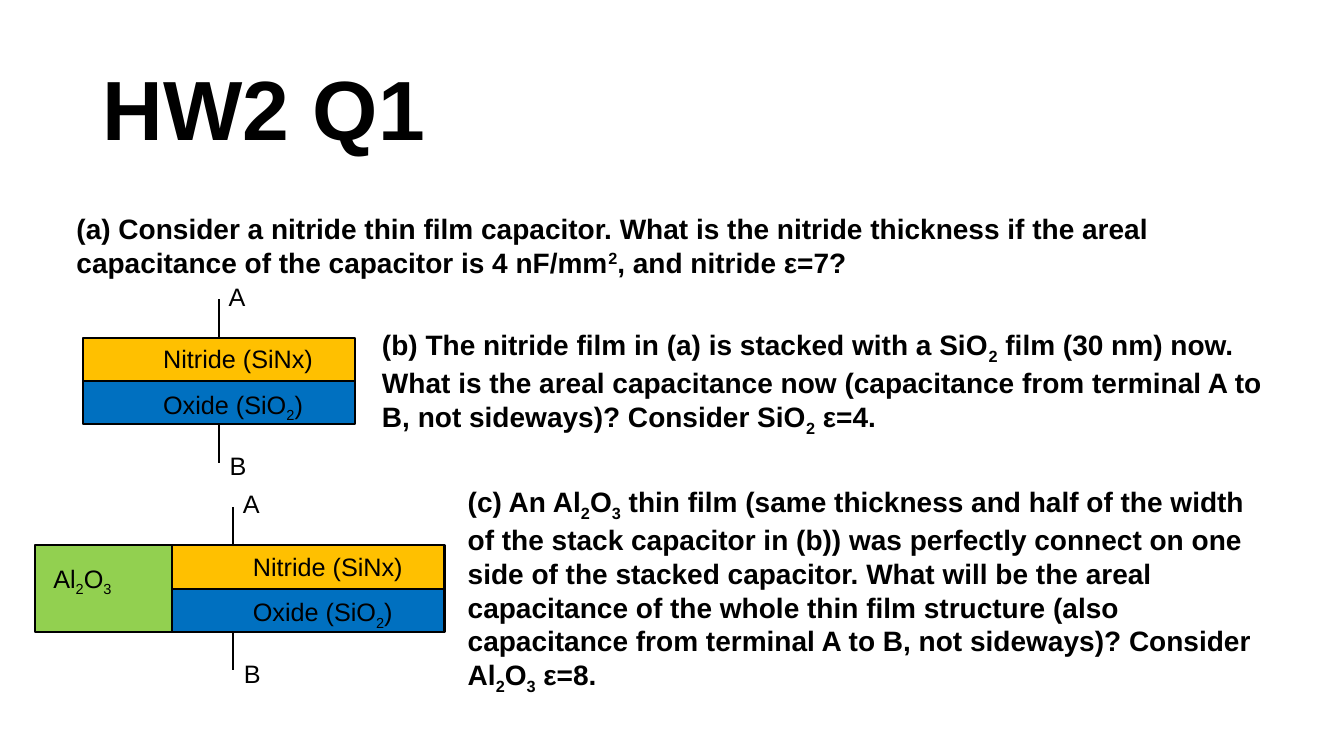
from pptx import Presentation
from pptx.dml.color import RGBColor
from pptx.enum.shapes import MSO_CONNECTOR, MSO_SHAPE
from pptx.enum.text import MSO_ANCHOR, MSO_AUTO_SIZE, PP_ALIGN
from pptx.oxml.ns import qn
from pptx.util import Pt
from lxml import etree

RECT, STRAIGHT = MSO_SHAPE.RECTANGLE, MSO_CONNECTOR.STRAIGHT
GROW, FIXED = MSO_AUTO_SIZE.SHAPE_TO_FIT_TEXT, MSO_AUTO_SIZE.NONE
MIDDLE, LEFT = MSO_ANCHOR.MIDDLE, PP_ALIGN.LEFT
BLACK = RGBColor(0x00, 0x00, 0x00)
AMBER = RGBColor(0xFF, 0xC0, 0x00)
BLUE = RGBColor(0x00, 0x70, 0xC0)
GREEN = RGBColor(0x92, 0xD0, 0x50)
FONT = "Arial"
PX = 9144  # EMU per px, 100 px to the inch

# Content: each run is (text, baseline shift in percent)
SUP, SUB = 30, -25
TITLE = "HW2 Q1"
ALUMINA = [("Al", 0), ("2", SUB), ("O", 0), ("3", SUB)]
QUESTIONS = [  # (left, top, width, height), runs
    ((66, 205, 1218, 125), [
        ("(a) Consider a nitride thin film capacitor. What is the nitride thickness "
         "if the areal capacitance of the capacitor is 4 nF/mm", 0),
        ("2", SUP), (", and nitride ε=7?", 0)]),
    ((369, 320, 905, 158), [
        ("(b) The nitride film in (a) is stacked with a SiO", 0), ("2", SUB),
        (" film (30 nm) now. What is the areal capacitance now (capacitance from "
         "terminal A to B, not sideways)? Consider SiO", 0),
        ("2", SUB), (" ε=4.", 0)]),
    ((454, 476, 818, 259), [
        ("(c) An ", 0), *ALUMINA,
        (" thin film (same thickness and half of the width of the stack capacitor "
         "in (b)) was perfectly connect on one side of the stacked capacitor. What "
         "will be the areal capacitance of the whole thin film structure (also "
         "capacitance from terminal A to B, not sideways)? Consider ", 0),
        *ALUMINA, (" ε=8.", 0)]),
]
LAYERS = [  # fill, label runs, label drop below the layer's top
    (AMBER, [("Nitride (SiNx)", 0)], 1),
    (BLUE, [("Oxide (SiO", 0), ("2", SUB), (")", 0)], 3),
]
STACKS = [(82, 335, 217), (171, 541, 231)]  # left, top, wire x
LAYER_W, LAYER_H, WIRE = 270, 43, 38
ALUMINA_W = 136


def emu(*lengths):
    return [n * PX for n in lengths]


def add_runs(p, runs, size, bold):
    for text, shift in runs:
        r = p.add_run()
        r.text = text
        r.font.name, r.font.size, r.font.bold = FONT, Pt(size), bold
        r.font.color.rgb = BLACK
        if shift:
            r._r.get_or_add_rPr().set("baseline", str(shift * 1000))


def add_text(s, box, runs, size=18, bold=False):
    tf = s.shapes.add_textbox(*emu(*box)).text_frame
    tf.word_wrap, tf.auto_size = True, GROW
    add_runs(tf.paragraphs[0], runs, size, bold)


def add_film(s, box, fill):
    sp = s.shapes.add_shape(RECT, *emu(*box))
    sp.shadow.inherit = False
    sp.fill.solid()
    sp.fill.fore_color.rgb = fill
    sp.line.color.rgb, sp.line.width = BLACK, Pt(1.5)
    return sp


def add_wire(s, x, y1, y2, film, site):
    wire = s.shapes.add_connector(STRAIGHT, *emu(x, y1, x, y2))
    wire.line.color.rgb, wire.line.width = BLACK, Pt(1.5)
    etree.SubElement(wire._element.spPr, qn("a:effectLst"))
    if film.left + film.width // 2 == x * PX:
        wire.begin_connect(film, site)


def add_stack(s, left, top, wire_x):
    films = []
    for i, (fill, label, drop) in enumerate(LAYERS):
        y = top + i * LAYER_H
        films.append(add_film(s, (left, y, LAYER_W, LAYER_H), fill))
    for i, (fill, label, drop) in enumerate(LAYERS):
        y = top + i * LAYER_H + drop
        add_text(s, (left + 70, y, 186, 40), label)
    # Terminals
    bottom = top + len(LAYERS) * LAYER_H
    add_wire(s, wire_x, top, top - WIRE, films[0], 0)
    add_wire(s, wire_x, bottom, bottom + WIRE, films[-1], 2)
    add_text(s, (wire_x, top - 61, 63, 40), [("A", 0)])
    add_text(s, (wire_x + 1, bottom + 21, 63, 40), [("B", 0)])


def main():
    prs = Presentation()
    prs.slide_width, prs.slide_height = emu(1333, 750)
    s = prs.slides.add_slide(prs.slide_layouts[5])

    # Title
    title = s.shapes.title
    title.left, title.top, title.width, title.height = emu(92, 40, 1150, 145)
    tf = title.text_frame
    tf.vertical_anchor, tf.auto_size, tf.word_wrap = MIDDLE, FIXED, True
    p = tf.paragraphs[0]
    p.alignment, p.line_spacing = LEFT, 0.9
    add_runs(p, [(TITLE, 0)], 60, True)

    # Questions
    for box, runs in QUESTIONS:
        add_text(s, box, runs, 20, True)

    # Stacked capacitors
    for stack in STACKS:
        add_stack(s, *stack)

    # Alumina film on the left side of the second stack
    left, top, _ = STACKS[1]
    left -= ALUMINA_W
    add_film(s, (left, top, ALUMINA_W, len(LAYERS) * LAYER_H), GREEN)
    add_text(s, (left + 8, top + 13, 99, 40), ALUMINA)

    prs.save("out.pptx")


if __name__ == "__main__":
    main()
